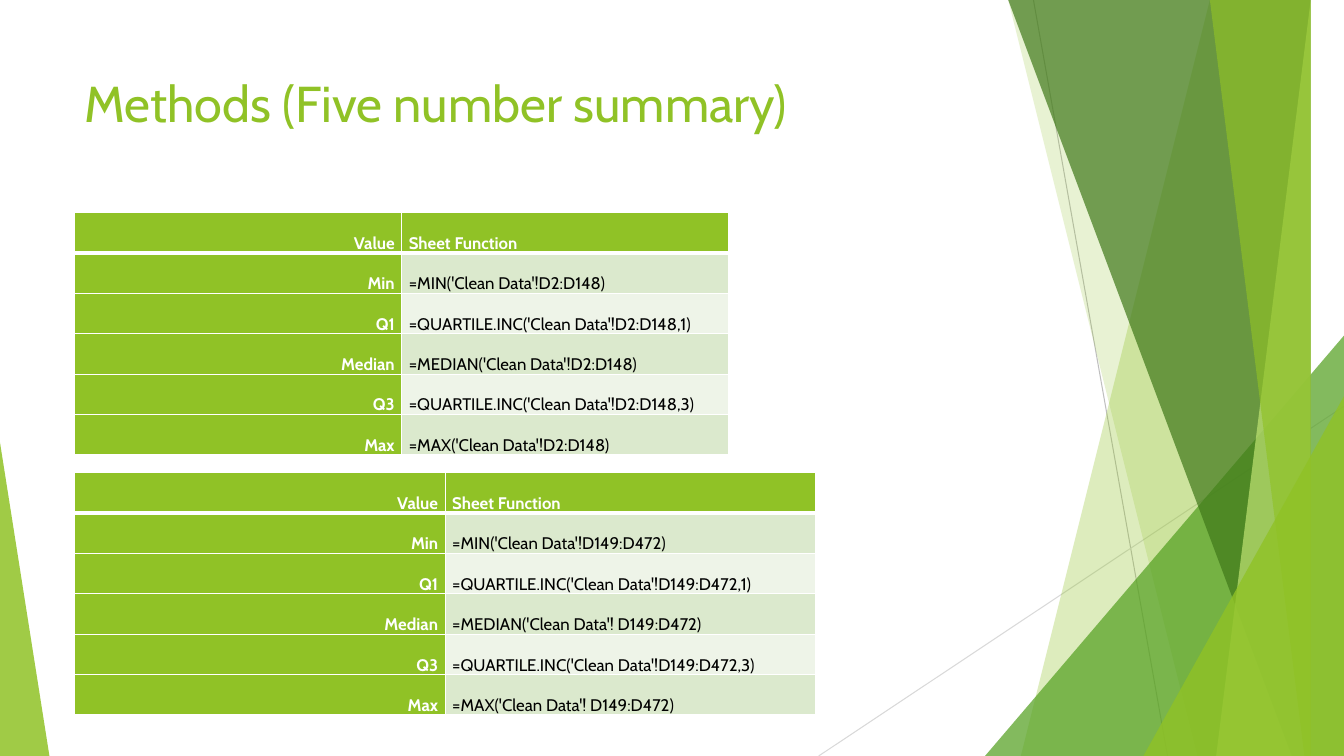
from lxml import etree
from pptx import Presentation
from pptx.dml.color import RGBColor
from pptx.enum import shapes, text
from pptx.oxml import ns
from pptx.util import Inches, Pt

FONT = "Cabin"
LIME = RGBColor(0x90, 0xC2, 0x26)
GREEN = RGBColor(0x54, 0xA0, 0x21)
FOREST = RGBColor(0x3F, 0x78, 0x19)
PALE_LIME = RGBColor(0xC0, 0xE4, 0x74)
BAND_DARK = RGBColor(0xDB, 0xE9, 0xCD)
BAND_LIGHT = RGBColor(0xEE, 0xF4, 0xE8)
WHITE = RGBColor(0xFF, 0xFF, 0xFF)
BLACK = RGBColor(0, 0, 0)
MID_GREY = RGBColor(0xBF, 0xBF, 0xBF)
LIGHT_GREY = RGBColor(0xD9, 0xD9, 0xD9)

SLIDE_WIDTH, SLIDE_HEIGHT = 13.33, 7.5
ROW_HEIGHT = 0.4

FIRST_SUMMARY = [
    ("Value", "Sheet Function"),
    ("Min", "=MIN('Clean Data'!D2:D148)"),
    ("Q1", "=QUARTILE.INC('Clean Data'!D2:D148,1)"),
    ("Median", "=MEDIAN('Clean Data'!D2:D148)"),
    ("Q3", "=QUARTILE.INC('Clean Data'!D2:D148,3)"),
    ("Max", "=MAX('Clean Data'!D2:D148)"),
]
SECOND_SUMMARY = [
    ("Value", "Sheet Function"),
    ("Min", "=MIN('Clean Data'!D149:D472)"),
    ("Q1", "=QUARTILE.INC('Clean Data'!D149:D472,1)"),
    ("Median", "=MEDIAN('Clean Data'! D149:D472)"),
    ("Q3", "=QUARTILE.INC('Clean Data'!D149:D472,3)"),
    ("Max", "=MAX('Clean Data'! D149:D472)"),
]


def write(frame, words, size=12, color=BLACK, bold=False,
          align=text.PP_ALIGN.LEFT, spacing=1.0):
    """Put one formatted paragraph into a text frame."""
    frame.word_wrap = True
    paragraph = frame.paragraphs[0]
    paragraph.alignment = align
    paragraph.line_spacing = spacing
    run = paragraph.add_run()
    run.text = words
    run.font.name = FONT
    run.font.size = Pt(size)
    run.font.bold = bold
    run.font.color.rgb = color


def tint(facet, color, opacity):
    """Fill a facet with a translucent colour and no outline."""
    facet.shadow.inherit = False
    facet.line.fill.background()
    facet.fill.solid()
    facet.fill.fore_color.rgb = color
    srgb = facet.fill._xPr.find(".//" + ns.qn("a:srgbClr"))
    etree.SubElement(srgb, ns.qn("a:alpha"), val=str(opacity * 1000))


def add_ray(slide, start, end, color):
    """Draw a thin straight line between two points."""
    ray = slide.shapes.add_connector(
        shapes.MSO_CONNECTOR.STRAIGHT, *map(Inches, start + end))
    ray.line.color.rgb = color
    ray.line.width = Pt(0.75)
    etree.SubElement(ray._element.spPr, ns.qn("a:effectLst"))


def add_triangle(slide, left, top, width, height, apex, color, opacity):
    """Draw a right triangle whose apex sits at the given fraction."""
    triangle = slide.shapes.add_shape(
        shapes.MSO_SHAPE.ISOSCELES_TRIANGLE,
        *map(Inches, (left, top, width, height)))
    triangle.adjustments[0] = apex
    tint(triangle, color, opacity)


def add_panel(slide, box, top_offset, bottom_offset, color, opacity):
    """Draw a panel with a slanted left edge, flush with the right of the box."""
    left, top, width, height = box
    right, bottom = left + width, top + height
    outline = slide.shapes.build_freeform(
        left + top_offset, top, scale=Inches(1))
    outline.add_line_segments(
        [(right, top), (right, bottom), (left + bottom_offset, bottom)], close=True)
    tint(outline.convert_to_shape(), color, opacity)


def add_right_facets(slide, left, top, width, height):
    """Layer the rays, panels and triangles along the right side."""
    box = left, top, width, height
    right, bottom = left + width, top + height
    add_ray(slide, (left + 2.13, top), (left + 3.46, bottom), MID_GREY)
    add_ray(slide, (right, top + 4.03), (left, bottom), LIGHT_GREY)
    add_panel(slide, box, 4.16, 1.92, LIME, 30)
    add_panel(slide, box, 2.38, 3.71, LIME, 20)
    add_triangle(slide, right - 3.56, bottom - 4.17, 3.56, 4.17, 1, GREEN, 72)
    add_panel(slide, box, 2.09, 4.79, FOREST, 70)
    add_panel(slide, box, 4.91, 3.8, PALE_LIME, 70)
    add_panel(slide, box, 3.84, 5.06, LIME, 65)
    add_triangle(slide, right - 1.99, bottom - 3.57, 1.99, 3.57, 1, LIME, 80)


def add_title(slide, left, top, width, height):
    """Place the slide title."""
    title = slide.shapes.add_textbox(*map(Inches, (left, top, width, height)))
    write(title.text_frame, "Methods (Five number summary)", size=36, color=LIME)


def add_borders(cell, top, bottom):
    """Draw white cell borders with the given top and bottom weights."""
    properties = cell._tc.get_or_add_tcPr()
    for side, weight in (("L", 1), ("R", 1), ("T", top), ("B", bottom)):
        border = etree.SubElement(
            properties, ns.qn(f"a:ln{side}"), w=str(Pt(weight)))
        solid = etree.SubElement(border, ns.qn("a:solidFill"))
        etree.SubElement(solid, ns.qn("a:srgbClr"), val=str(WHITE))


def add_summary_table(slide, left, top, width, height, summary):
    """Build a five number summary table with equal columns and rows."""
    table = slide.shapes.add_table(
        len(summary), 2, *map(Inches, (left, top, width, height))).table
    table.first_row = table.horz_banding = False
    for column in table.columns:
        column.width = Inches(width / 2)
    for row_number, entries in enumerate(summary):
        table.rows[row_number].height = Inches(height / len(summary))
        for column_number, words in enumerate(entries):
            cell = table.cell(row_number, column_number)
            heading = row_number == 0 or column_number == 0
            band = BAND_DARK if row_number % 2 else BAND_LIGHT
            add_borders(cell, top=3 if row_number == 1 else 1,
                        bottom=3 if row_number == 0 else 1)
            cell.fill.solid()
            cell.fill.fore_color.rgb = LIME if heading else band
            cell.margin_left = cell.margin_right = Inches(0.07)
            cell.margin_top = cell.margin_bottom = 0
            write(cell.text_frame, words, bold=heading, spacing=2.0,
                  color=WHITE if heading else BLACK,
                  align=text.PP_ALIGN.JUSTIFY if column_number
                  else text.PP_ALIGN.RIGHT)


def main():
    """Build the slide and save it."""
    deck = Presentation()
    deck.slide_width, deck.slide_height = Inches(SLIDE_WIDTH), Inches(SLIDE_HEIGHT)
    slide = deck.slides.add_slide(deck.slide_layouts[6])
    add_right_facets(slide, 8.12, 0, SLIDE_WIDTH - 8.12, SLIDE_HEIGHT)
    add_triangle(slide, 0, 4.39, 0.49, 3.11, 0, LIME, 85)
    add_title(slide, 0.74, 0.67, 9.4, 1.44)
    for top, width, summary in ((2.11, 6.49, FIRST_SUMMARY),
                                (4.69, 7.35, SECOND_SUMMARY)):
        add_summary_table(
            slide, 0.74, top, width, ROW_HEIGHT * len(summary), summary)
    deck.save("out.pptx")


if __name__ == "__main__":
    main()
